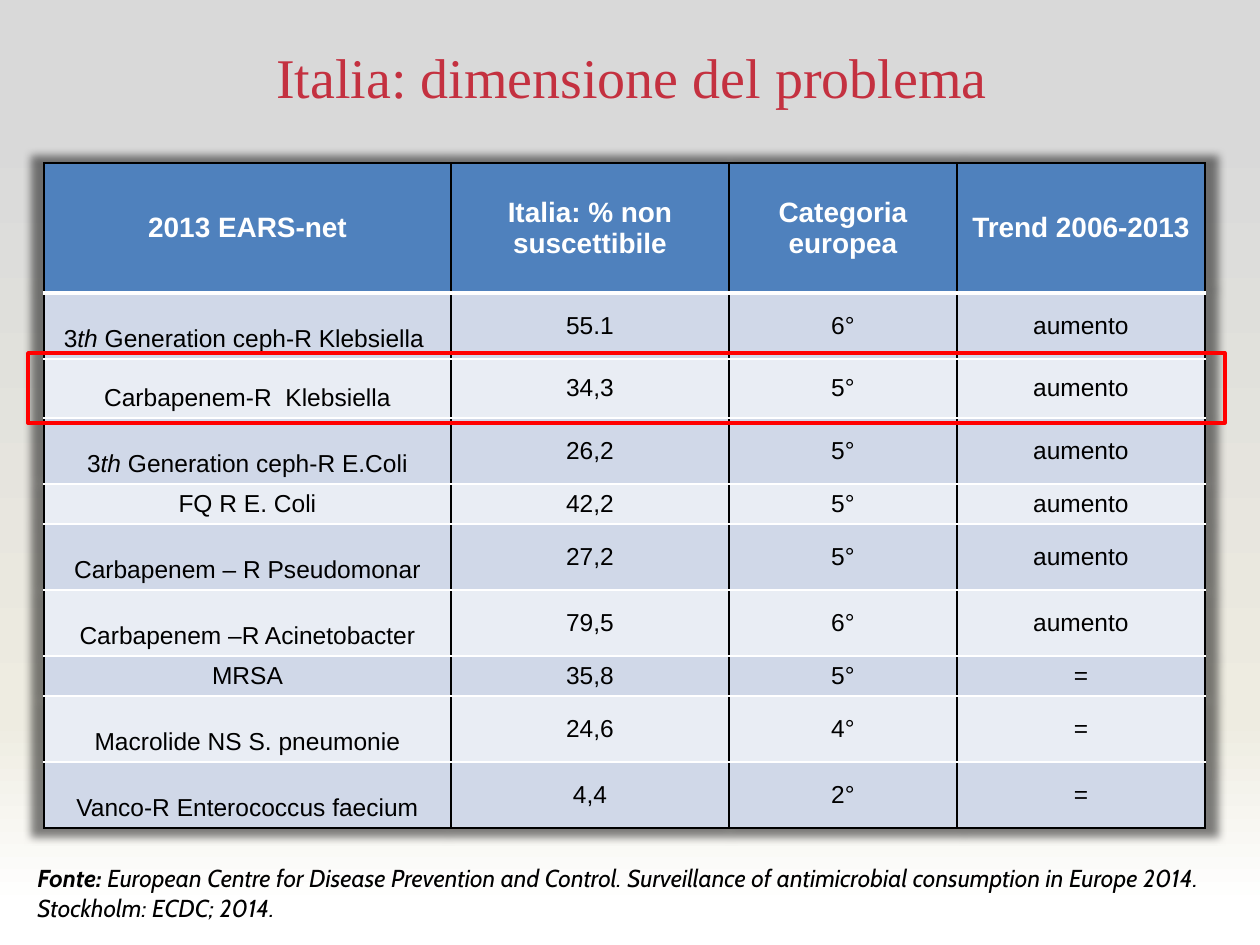
from lxml.etree import SubElement
from pptx import Presentation
from pptx.dml.color import RGBColor
from pptx.enum.shapes import MSO_SHAPE
from pptx.enum.text import MSO_ANCHOR, PP_ALIGN
from pptx.oxml import parse_xml
from pptx.oxml.ns import qn
from pptx.util import Emu, Inches, Pt

BLACK = RGBColor(0x00, 0x00, 0x00)
WHITE = RGBColor(0xFF, 0xFF, 0xFF)
CRIMSON = RGBColor(0xC4, 0x31, 0x40)
RED = RGBColor(0xFF, 0x00, 0x00)
BLUE = RGBColor(0x4F, 0x81, 0xBD)
BANDS = [RGBColor(0xD0, 0xD8, 0xE8), RGBColor(0xE9, 0xED, 0xF4)]
CREAM = RGBColor(0xEE, 0xEC, 0xE1)
GREY = RGBColor(0xD9, 0xD9, 0xD9)
NS = 'xmlns:a="http://schemas.openxmlformats.org/drawingml/2006/main"'

COLS = [407, 278, 228, 248]
ROWS = [130, 66, 59, 66, 40, 66, 66, 40, 66, 66]
# Asterisks enclose italic text
DATA = [
    ("2013 EARS-net", "Italia: % non suscettibile", "Categoria europea", "Trend 2006-2013"),
    ("3*th* Generation ceph-R Klebsiella ", "55.1", "6°", "aumento"),
    ("Carbapenem-R  Klebsiella", "34,3", "5°", "aumento"),
    ("3*th* Generation ceph-R E.Coli", "26,2", "5°", "aumento"),
    ("FQ R E. Coli", "42,2", "5°", "aumento"),
    ("Carbapenem – R Pseudomonar", "27,2", "5°", "aumento"),
    ("Carbapenem –R Acinetobacter", "79,5", "6°", "aumento"),
    ("MRSA", "35,8", "5°", "="),
    ("Macrolide NS S. pneumonie", "24,6", "4°", "="),
    ("Vanco-R Enterococcus faecium", "4,4", "2°", "="),
]


def px(n):
    return Emu(round(n * 914400 / 126))


def style(para, face, size, color, bold=None):
    font = para.font
    font.name, font.size, font.bold = face, Pt(size), bold
    font.color.rgb = color


def paint_back(slide):
    fill = slide.background.fill
    fill.gradient()
    fill.gradient_angle = 90
    stops = slide.background._cSld.find(".//" + qn("a:gsLst"))
    for stop in list(stops):
        stops.remove(stop)
    for pos, color in [(0, WHITE), (4, WHITE), (24, CREAM), (88, GREY)]:
        stop = SubElement(stops, qn("a:gs"), pos=str(pos * 1000))
        SubElement(stop, qn("a:srgbClr"), val=str(color))


def add_title(slide, box):
    title = slide.shapes.title
    title.left, title.top, title.width, title.height = map(px, box)
    frame = title.text_frame
    frame.text = "Italia: dimensione del problema"
    frame.vertical_anchor = MSO_ANCHOR.MIDDLE
    para = frame.paragraphs[0]
    para.alignment = PP_ALIGN.CENTER
    style(para, "Times New Roman", 32, CRIMSON)


def set_edges(cell, top, bottom, thick):
    # Border lines come before the fill
    edges = [("lnL", BLACK, 1), ("lnR", BLACK, 1), ("lnT", *top), ("lnB", *bottom)]
    props = cell._tc.get_or_add_tcPr()
    for i, (tag, color, width) in enumerate(edges):
        props.insert(i, parse_xml(
            f'<a:{tag} {NS} w="{Pt(width)}"><a:solidFill>'
            f'<a:srgbClr val="{color}"/></a:solidFill></a:{tag}>'))


def fill_cell(cell, text, row, col):
    head = row == 0
    cell.fill.solid()
    cell.fill.fore_color.rgb = BLUE if head else BANDS[(row - 1) % 2]
    low = col == 0 and not head
    cell.vertical_anchor = MSO_ANCHOR.BOTTOM if low else MSO_ANCHOR.MIDDLE
    para = cell.text_frame.paragraphs[0]
    para.alignment = PP_ALIGN.CENTER
    style(para, "Arial", 16 if head else 14, WHITE if head else BLACK, head)
    for i, part in enumerate(text.split("*")):
        run = para.add_run()
        run.text = part
        if i % 2:
            run.font.italic = True


def add_grid(slide, left, top):
    frame = slide.shapes.add_table(len(ROWS), len(COLS), px(left), px(top),
                                   px(sum(COLS)), px(sum(ROWS)))
    table = frame.table
    for col, width in zip(table.columns, COLS):
        col.width = px(width)
    last = len(ROWS) - 1
    rule = (WHITE, 1)
    for r, (line, height) in enumerate(zip(DATA, ROWS)):
        table.rows[r].height = px(height)
        above = {0: (BLACK, 1), 1: (WHITE, 3)}.get(r, rule)
        below = {0: (WHITE, 3), last: (BLACK, 1)}.get(r, rule)
        for c, text in enumerate(line):
            cell = table.cell(r, c)
            fill_cell(cell, text, r, c)
            set_edges(cell, above, below, 1)
    # Soft shadow around the whole table
    table._tbl.tblPr.insert(0, parse_xml(
        f'<a:effectLst {NS}><a:outerShdw blurRad="{Pt(5)}" sx="102000" sy="102000" '
        'algn="ctr" rotWithShape="0"><a:prstClr val="black"><a:alpha val="50000"/>'
        '</a:prstClr></a:outerShdw></a:effectLst>'))


def add_source(slide, box):
    frame = slide.shapes.add_textbox(*map(px, box)).text_frame
    frame.word_wrap = True
    para = frame.paragraphs[0]
    style(para, "Cabin", 14, BLACK)
    para.font.italic = True
    label = para.add_run()
    label.text = "Fonte: "
    label.font.bold = True
    para.add_run().text = (
        "European Centre for Disease Prevention and Control. Surveillance of "
        "antimicrobial consumption in Europe 2014. Stockholm: ECDC; 2014.")


def add_mark(slide, box):
    mark = slide.shapes.add_shape(MSO_SHAPE.RECTANGLE, *map(px, box))
    mark.shadow.inherit = False
    mark.fill.background()
    mark.line.color.rgb = RED
    mark.line.width = Pt(2)


def main():
    deck = Presentation()
    deck.slide_width, deck.slide_height = Inches(10), Inches(7.5)
    slide = deck.slides.add_slide(deck.slide_layouts[5])
    paint_back(slide)
    add_title(slide, (65, 16, 1134, 121))
    add_grid(slide, 44, 163)
    add_source(slide, (25, 857, 1201, 72))
    add_mark(slide, (28, 353, 1197, 70))
    deck.save("out.pptx")


if __name__ == "__main__":
    main()
